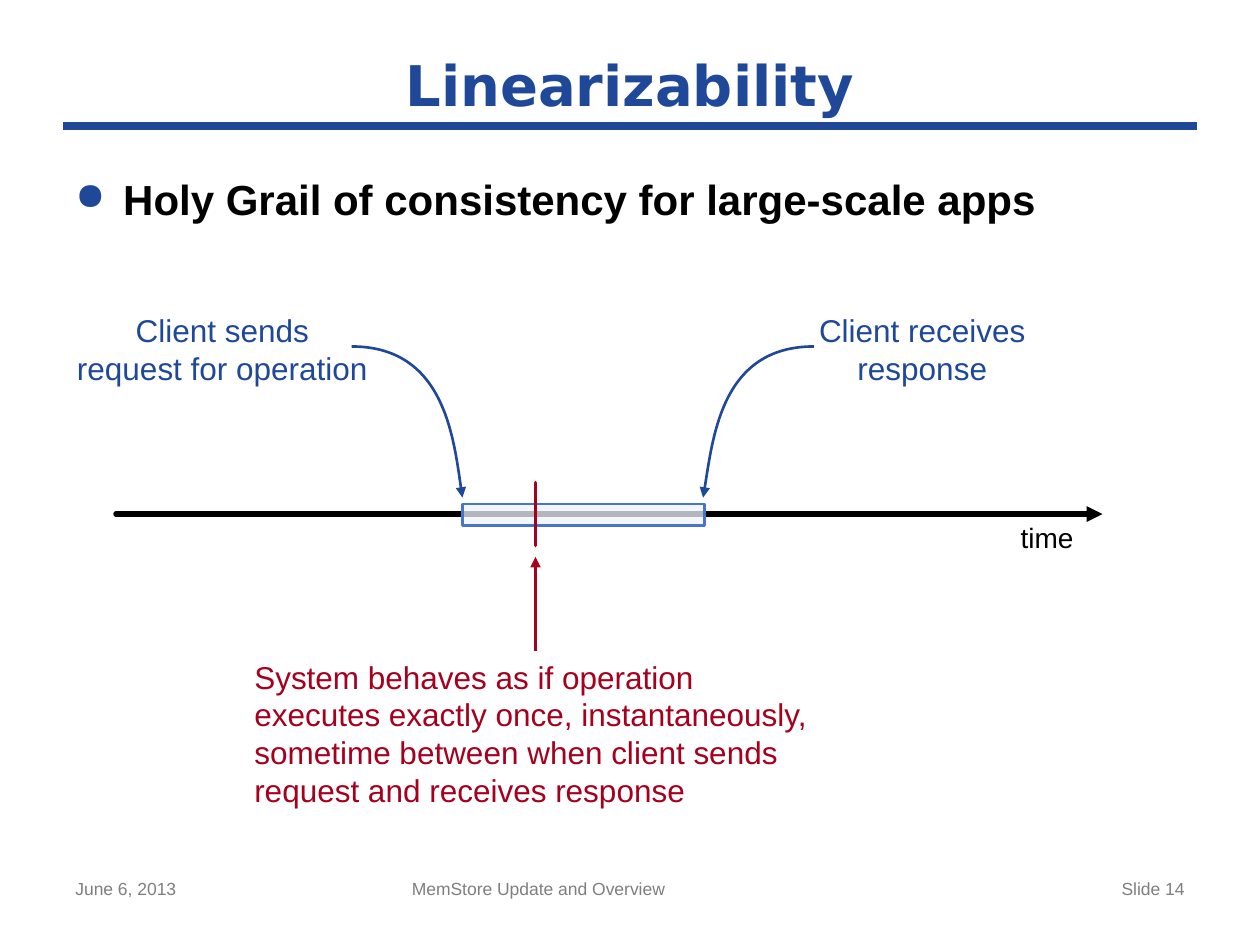
from dataclasses import dataclass, field

from lxml.etree import SubElement
from pptx import Presentation
from pptx.dml.color import RGBColor
from pptx.enum.shapes import MSO_CONNECTOR, MSO_SHAPE
from pptx.enum.text import MSO_ANCHOR, PP_ALIGN
from pptx.oxml.ns import qn
from pptx.shapes.base import BaseShape
from pptx.slide import Slide
from pptx.util import Inches, Pt

COLORS = {
    "blue": "1F4899",
    "red": "A5001E",
    "black": "000000",
    "gray": "7F7F7F",
    "interval_fill": "EFF3FB",
    "interval_line": "4974CB",
}
Point = tuple[float, float]


@dataclass
class Label:
    text: str
    box: tuple[float, float, float, float]
    size: float
    color: str
    align: PP_ALIGN = PP_ALIGN.LEFT
    font: dict = field(default_factory=dict)
    frame: dict = field(default_factory=dict)


@dataclass
class Line:
    start: Point
    end: Point
    color: str
    width: float
    arrow: bool = False
    round_cap: bool = False


@dataclass
class Curve:
    start: Point
    controls: tuple[Point, Point]
    end: Point


NO_WRAP = {"word_wrap": False}
NO_MARGINS = {f"margin_{side}": 0 for side in ("left", "top", "right", "bottom")}
FOOTER_TOP, FOOTER_HEIGHT = 6.92, 0.43

TITLE = Label("Linearizability", (0.5, 0.33, 9, 0.67), 32, "blue", PP_ALIGN.CENTER,
              {"name": "DejaVu Sans", "bold": True},
              {"vertical_anchor": MSO_ANCHOR.MIDDLE})
BULLET = Label("Holy Grail of consistency for large-scale apps",
               (0.5, 1.33, 9, 5.37), 24, "black", font={"bold": True})
LABELS = [
    TITLE,
    Label("June 6, 2013", (0.5, FOOTER_TOP, 2.33, FOOTER_HEIGHT), 10, "gray"),
    Label("MemStore Update and Overview",
          (3.17, FOOTER_TOP, 3.75, FOOTER_HEIGHT), 10, "gray"),
    Label("Slide 14", (7.17, FOOTER_TOP, 2.33, FOOTER_HEIGHT), 10, "gray",
          PP_ALIGN.RIGHT),
    Label("time", (8.1, 4.13, 0.42, 0.27), 16, "black", frame=NO_WRAP | NO_MARGINS),
    Label("Client sends\nrequest for operation", (0.5, 2.42, 2.53, 0.71), 18, "blue",
          PP_ALIGN.CENTER, frame=NO_WRAP),
    Label("Client receives\vresponse", (6.39, 2.42, 1.86, 0.71), 18, "blue",
          PP_ALIGN.CENTER, frame=NO_WRAP),
    Label("System behaves as if operation executes exactly once, instantaneously, "
          "sometime between when client sends request and receives response",
          (1.92, 5.17, 4.67, 1.5), 18, "red"),
]

TITLE_RULE = Line((0.5, 1), (9.5, 1), "blue", 4.5)
TIME_AXIS = Line((0.92, 4.08), (8.75, 4.08), "black", 3, arrow=True, round_cap=True)
EXECUTION_MARK = Line((4.25, 3.83), (4.25, 4.33), "red", 2, round_cap=True)
EXECUTION_ARROW = Line((4.25, 5.17), (4.25, 4.42), "red", 1.5, arrow=True)
CURVES = [
    Curve((2.79, 2.75), ((3.52, 2.75), (3.61, 3.54)), (3.67, 3.95)),
    Curve((6.46, 2.75), ((5.73, 2.75), (5.65, 3.54)), (5.58, 3.95)),
]


def rgb(color: str) -> RGBColor:
    return RGBColor.from_string(COLORS[color])


def set_line(shape: BaseShape, color: str, width: float, arrow: bool = False) -> None:
    shape.line.color.rgb = rgb(color)
    shape.line.width = Pt(width)
    if arrow:
        SubElement(shape.line._get_or_add_ln(), qn("a:tailEnd"), type="triangle")


def add_label(slide: Slide, label: Label) -> BaseShape:
    shape = slide.shapes.add_textbox(*map(Inches, label.box))
    frame = shape.text_frame
    for name, value in ({"word_wrap": True} | label.frame).items():
        setattr(frame, name, value)
    frame.text = label.text
    font_format = {"name": "Arial", "size": Pt(label.size)} | label.font
    for paragraph in frame.paragraphs:
        paragraph.alignment = label.align
        for run in paragraph.runs:
            for name, value in font_format.items():
                setattr(run.font, name, value)
            run.font.color.rgb = rgb(label.color)
    return shape


def add_bullet(slide: Slide, label: Label) -> None:
    paragraph = add_label(slide, label).text_frame.paragraphs[0]
    paragraph.space_before = Pt(12)
    properties = paragraph._p.get_or_add_pPr()
    indent = Inches(0.38)
    properties.set("marL", str(indent))
    properties.set("indent", str(-indent))
    bullet_color = SubElement(properties, qn("a:buClr"))
    SubElement(bullet_color, qn("a:srgbClr"), val=COLORS["blue"])
    SubElement(properties, qn("a:buSzPct"), val="90000")
    SubElement(properties, qn("a:buChar"), char="●")


def add_line(slide: Slide, line: Line) -> None:
    connector = slide.shapes.add_connector(
        MSO_CONNECTOR.STRAIGHT, *map(Inches, line.start + line.end))
    set_line(connector, line.color, line.width, line.arrow)
    if line.round_cap:
        connector.line._get_or_add_ln().set("cap", "rnd")
    SubElement(connector._element.spPr, qn("a:effectLst"))


def add_curve(slide: Slide, curve: Curve) -> None:
    """Draw an arrow along one cubic curve, made from a three-segment outline."""
    builder = slide.shapes.build_freeform(*map(Inches, curve.start), scale=1.0)
    points = [tuple(map(Inches, point)) for point in (*curve.controls, curve.end)]
    builder.add_line_segments(points, close=False)
    shape = builder.convert_to_shape()
    outline = shape._element.spPr.find(".//" + qn("a:path"))
    segments = outline.findall(qn("a:lnTo"))
    bezier = SubElement(outline, qn("a:cubicBezTo"))
    for segment in segments:
        bezier.append(segment[0])
        outline.remove(segment)
    shape.fill.background()
    set_line(shape, "blue", 1.5, arrow=True)
    shape.shadow.inherit = False


def add_interval(slide: Slide) -> None:
    """Cover the time between request and response with a translucent bar."""
    bar = slide.shapes.add_shape(
        MSO_SHAPE.RECTANGLE, *map(Inches, (3.67, 4, 1.92, 0.17)))
    bar.fill.solid()
    bar.fill.fore_color.rgb = rgb("interval_fill")
    fill_color = bar._element.spPr.find(qn("a:solidFill"))[0]
    SubElement(fill_color, qn("a:alpha"), val="75000")
    set_line(bar, "interval_line", 1.5)
    bar.shadow.inherit = False


def main() -> None:
    presentation = Presentation()
    presentation.slide_width = Inches(10)
    presentation.slide_height = Inches(7.5)
    slide = presentation.slides.add_slide(presentation.slide_layouts[6])

    add_line(slide, TITLE_RULE)
    add_bullet(slide, BULLET)
    add_line(slide, TIME_AXIS)
    add_interval(slide)
    for label in LABELS:
        add_label(slide, label)
    for curve in CURVES:
        add_curve(slide, curve)
    for line in (EXECUTION_MARK, EXECUTION_ARROW):
        add_line(slide, line)
    presentation.save("out.pptx")


if __name__ == "__main__":
    main()
